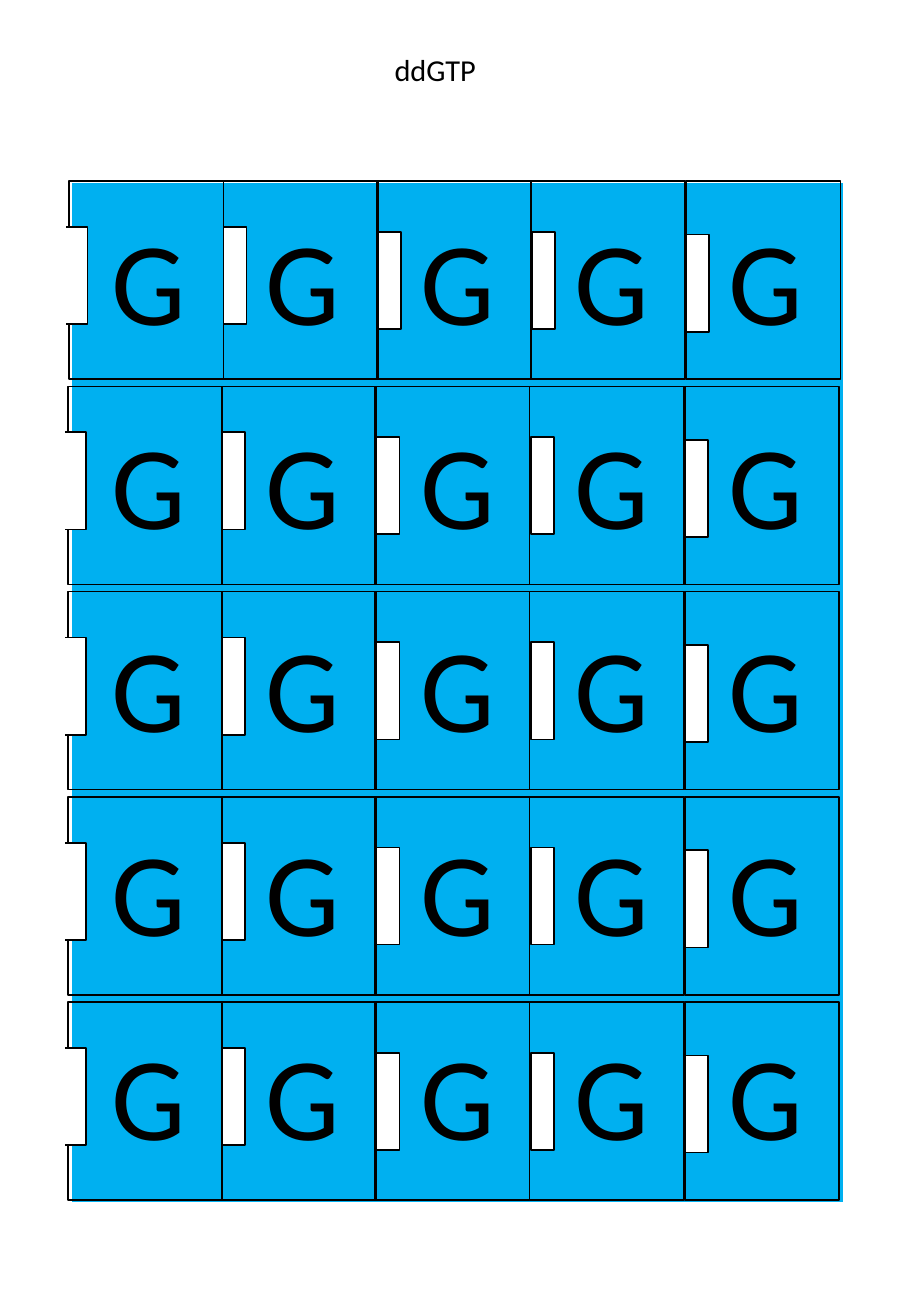
from pptx import Presentation
from pptx.dml.color import RGBColor
from pptx.enum import shapes, text
from pptx.util import Pt

BLACK = RGBColor(0, 0, 0)
WHITE = RGBColor(255, 255, 255)
BLUE = RGBColor(0x00, 0xB0, 0xF0)
NO_STYLE = "{2D5ABB26-0587-4C30-8999-92F81FD0307C}"
COUNT = 5
CARD_WIDTH, CARD_HEIGHT = 91.44, 117.36
ROW_TOP, ROW_PITCH = 107.4, 121.6
FRAME_OFFSETS = [0, 91.44, 182.16, 273.6, 365.76]
NOTCHES = [(91.44, 27.2), (182.88, 30), (274.32, 30), (365.76, 31.6)]


def style_text(paragraph, size):
    font = paragraph.runs[0].font
    font.name = "Calibri"
    font.size = Pt(size)
    font.color.rgb = BLACK


def add_box(group, left, top, width, height, fill=None, line=BLACK):
    box = group.shapes.add_shape(shapes.MSO_SHAPE.RECTANGLE, Pt(left), Pt(top), Pt(width), Pt(height))
    box.shadow.inherit = False
    if fill is None:
        box.fill.background()
    else:
        box.fill.solid()
        box.fill.fore_color.rgb = fill
    box.line.color.rgb = line
    box.line.width = Pt(1)


presentation = Presentation()
presentation.slide_width = Pt(540)
presentation.slide_height = Pt(779.76)
slide = presentation.slides.add_slide(presentation.slide_layouts[6])

title = slide.shapes.add_textbox(Pt(226.8), Pt(26.64), Pt(101.52), Pt(29.52))
title.text_frame.word_wrap = True
title.text_frame.auto_size = text.MSO_AUTO_SIZE.SHAPE_TO_FIT_TEXT
title.text_frame.text = "ddGTP"
style_text(title.text_frame.paragraphs[0], 18)

table_frame = slide.shapes.add_table(COUNT, COUNT, Pt(42.48), Pt(108.72), Pt(457.2), Pt(603.36))
table = table_frame.table
table.first_row = False
table.horz_banding = False
table._tbl.tblPr.find("{*}tableStyleId").text = NO_STYLE
for cell in table.iter_cells():
    cell.text_frame.text = "G"
    cell.vertical_anchor = text.MSO_ANCHOR.MIDDLE
    cell.fill.solid()
    cell.fill.fore_color.rgb = BLUE
    paragraph = cell.text_frame.paragraphs[0]
    paragraph.alignment = text.PP_ALIGN.CENTER
    style_text(paragraph, 70)

for row in range(COUNT):
    left = 41.04 if row == 0 else 40.32
    top = ROW_TOP + row * ROW_PITCH
    card_row = slide.shapes.add_group_shape()
    for offset in FRAME_OFFSETS:
        add_box(card_row, left + offset, top, CARD_WIDTH, CARD_HEIGHT)
    add_box(card_row, left - 14.4, top + 27.2, 25.2, 57.6, WHITE)
    add_box(card_row, left - 25.2, top + 19.44, 23.04, 72.72, WHITE, WHITE)
    for offset, drop in NOTCHES:
        add_box(card_row, left + offset, top + drop, 13.68, 57.6, WHITE)

presentation.save("out.pptx")
